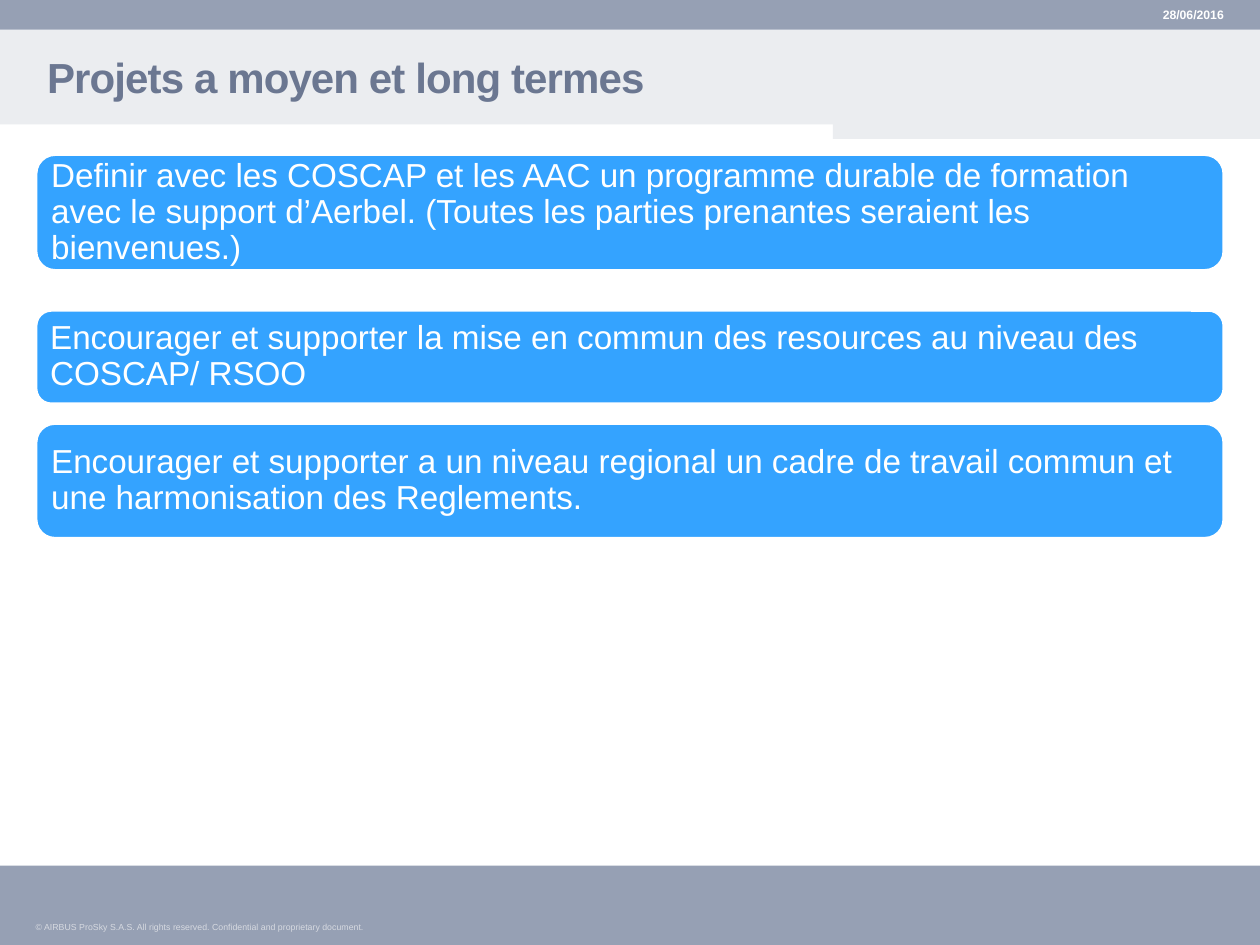
from pptx import Presentation
from pptx.dml.color import RGBColor
from pptx.enum.shapes import MSO_SHAPE
from pptx.enum.text import MSO_ANCHOR, PP_ALIGN
from pptx.util import Cm, Pt

RECT, ROUNDED = MSO_SHAPE.RECTANGLE, MSO_SHAPE.ROUNDED_RECTANGLE
MIDDLE = MSO_ANCHOR.MIDDLE
LEFT, RIGHT = PP_ALIGN.LEFT, PP_ALIGN.RIGHT

WHITE = RGBColor(0xFF, 0xFF, 0xFF)
BAND = RGBColor(0x96, 0xA0, 0xB4)
PALE = RGBColor(0xEB, 0xED, 0xF0)
SLATE = RGBColor(0x6B, 0x77, 0x91)
FAINT = RGBColor(0xD7, 0xDA, 0xE1)
BLUE = RGBColor(0x34, 0xA3, 0xFF)

WIDTH, HEIGHT = 25.4, 19.05
MARGIN = 0.72
CONTENT_W = WIDTH - 2 * MARGIN
TOP_H, FOOT_H = 0.6, 1.6

# top, height, text
PROJECTS = [
    (3.11, 2.35, "Definir avec les COSCAP et les AAC un programme durable de formation "
                 "avec le support d’Aerbel. (Toutes les parties prenantes seraient les "
                 "bienvenues.)"),
    (6.25, 1.9, "Encourager et supporter la mise en commun des resources au niveau des "
                "COSCAP/ RSOO"),
    (8.53, 2.33, "Encourager et supporter a un niveau regional un cadre de travail commun "
                 "et une harmonisation des Reglements."),
]


def write(shape, text, size, color, bold=False, align=LEFT, line_spacing=1.0,
          insets=(0, 0, 0, 0), tracking=None):
    """Fill a shape with one formatted paragraph; insets run left, top, right, bottom."""
    tf = shape.text_frame
    tf.word_wrap = True
    tf.vertical_anchor = MIDDLE
    tf.margin_left, tf.margin_top, tf.margin_right, tf.margin_bottom = map(Cm, insets)
    p = tf.paragraphs[0]
    p.alignment = align
    p.line_spacing = line_spacing
    r = p.add_run()
    r.text = text
    r.font.name = "Arial"
    r.font.size = Pt(size)
    r.font.bold = bold
    r.font.color.rgb = color
    if tracking is not None:
        r._r.get_or_add_rPr().set("spc", str(int(tracking * 100)))


def paint(shape, fill, line=None):
    shape.shadow.inherit = False
    shape.fill.solid()
    shape.fill.fore_color.rgb = fill
    if line is None:
        shape.line.fill.background()
    else:
        shape.line.color.rgb = line
        shape.line.width = Pt(2)


def add_box(s, kind, x, y, w, h, fill, line=None):
    sp = s.shapes.add_shape(kind, Cm(x), Cm(y), Cm(w), Cm(h))
    paint(sp, fill, line)
    return sp


def add_label(s, x, y, w, h, text, **fmt):
    write(s.shapes.add_textbox(Cm(x), Cm(y), Cm(w), Cm(h)), text, **fmt)


def add_title_band(s):
    step_x, step_y, bottom = 16.79, 2.51, 2.8
    corners = [(WIDTH, TOP_H), (WIDTH, bottom), (step_x, bottom),
               (step_x, step_y), (0, step_y)]
    fb = s.shapes.build_freeform(Cm(0), Cm(TOP_H))
    fb.add_line_segments([(Cm(x), Cm(y)) for x, y in corners], close=True)
    paint(fb.convert_to_shape(), PALE)


def set_title(s, text):
    title = s.shapes.title
    title.left, title.top = Cm(MARGIN), Cm(0.79)
    title.width, title.height = Cm(CONTENT_W), Cm(1.7)
    write(title, text, size=24, color=SLATE, bold=True, line_spacing=0.8,
          insets=(0.23, 0, 0, 0), tracking=-0.5)
    s.shapes._spTree.append(title._element)  # in front of the band


def main():
    prs = Presentation()
    prs.slide_width, prs.slide_height = Cm(WIDTH), Cm(HEIGHT)
    s = prs.slides.add_slide(prs.slide_layouts[5])

    add_title_band(s)
    add_box(s, RECT, 0, HEIGHT - FOOT_H, WIDTH, FOOT_H, BAND)
    add_box(s, RECT, 0, 0, WIDTH, TOP_H, BAND)
    add_label(s, MARGIN, 18.58, 8.5, 0.34,
              "© AIRBUS ProSky S.A.S. All rights reserved. "
              "Confidential and proprietary document.",
              size=5, color=FAINT, insets=(0, 0, 0.25, 0.13))
    set_title(s, "Projets a moyen et long termes")
    add_label(s, 21.27, 0, 3.4, TOP_H, "28/06/2016",
              size=7, color=WHITE, bold=True, align=RIGHT)

    for top, height, text in PROJECTS:
        sp = add_box(s, ROUNDED, MARGIN, top, CONTENT_W, height, BLUE, line=WHITE)
        write(sp, text, size=19, color=WHITE, line_spacing=0.9, insets=(0.2,) * 4)

    prs.save("out.pptx")


if __name__ == "__main__":
    main()
